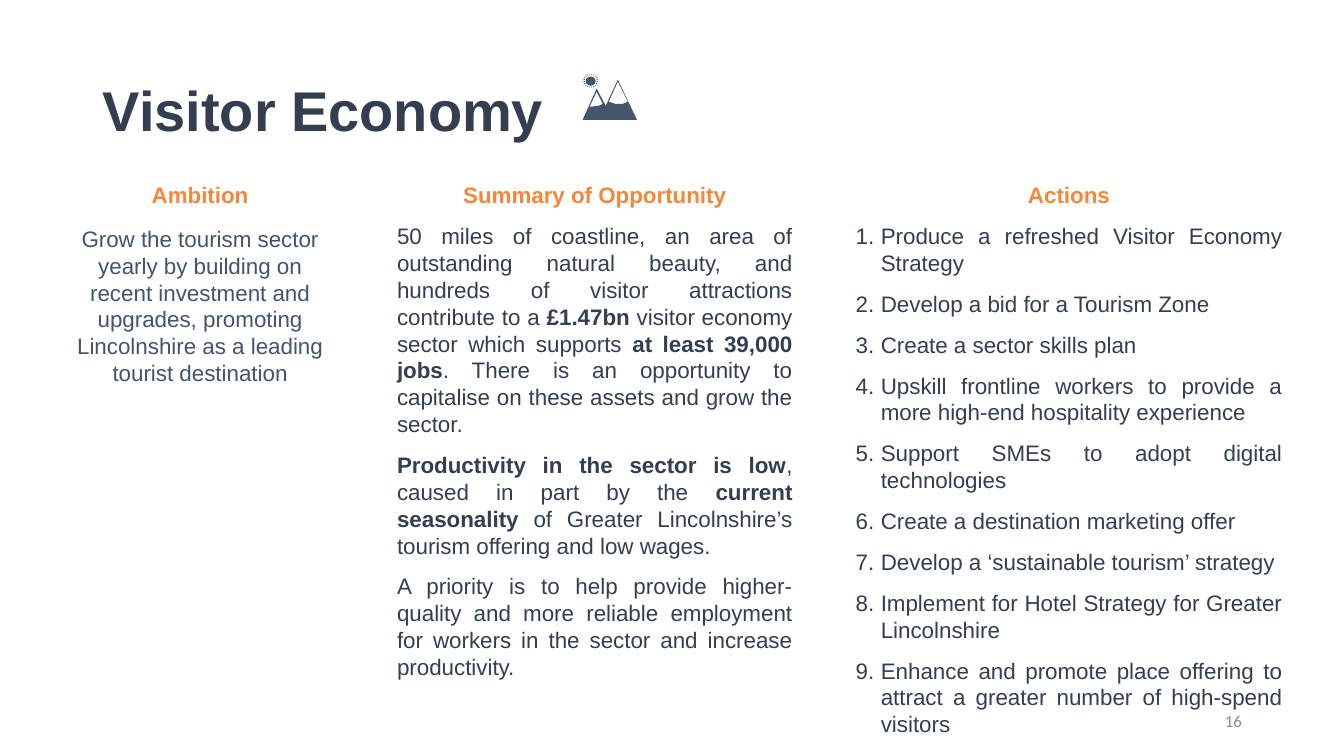
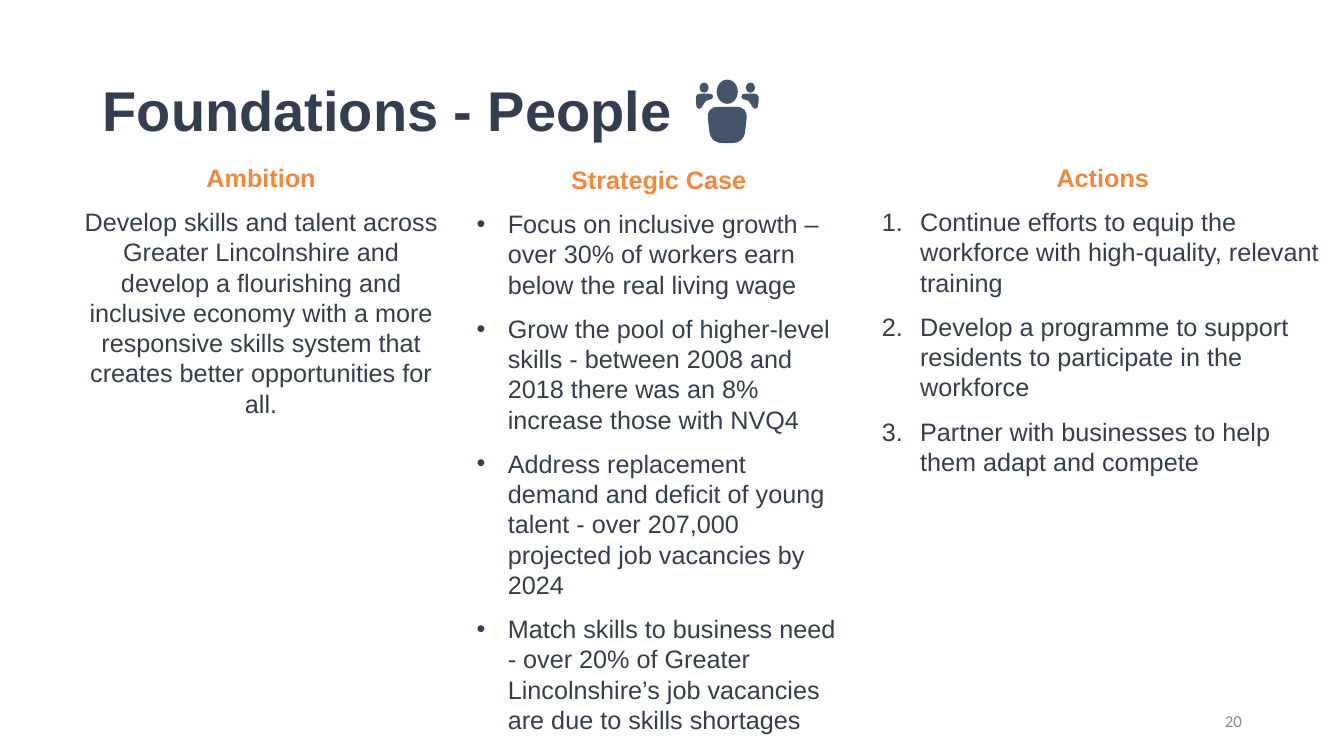
"""Build two strategy slides, each with a title, an icon and three columns."""
import math
from dataclasses import dataclass
from typing import Callable

from lxml import etree
from pptx import Presentation
from pptx.dml.color import RGBColor
from pptx.enum import shapes, text
from pptx.oxml import ns
from pptx.shapes.shapetree import GroupShapes
from pptx.slide import Slide
from pptx.util import Inches, Pt

NAVY = "333F50"
SLATE = "44546A"
ORANGE = "F5873D"
GREY = "8C8C8C"
LEFT, CENTER = text.PP_ALIGN.LEFT, text.PP_ALIGN.CENTER
RIGHT, JUSTIFY = text.PP_ALIGN.RIGHT, text.PP_ALIGN.JUSTIFY
NUMBER = ("buAutoNum", "type", "arabicPeriod")
DOT = ("buChar", "char", "•")

Point = tuple[float, float]
Outline = list[Point]


@dataclass(frozen=True)
class Column:
    """A heading with the paragraphs below it; ** marks bold text."""
    box: tuple[float, float, float, float]
    heading: str
    paragraphs: tuple[str, ...]
    alignment: text.PP_ALIGN = LEFT
    bullet: tuple[str, str, str] | None = None
    indent: float = 0
    color: str = NAVY
    space_after: float = 0


@dataclass(frozen=True)
class Page:
    """The content of one slide."""
    title: str
    number: int
    size: int
    icon: Callable[[GroupShapes], None]
    columns: tuple[Column, ...]


def rgb(color: str) -> RGBColor:
    """Turn a hex string into a colour."""
    return RGBColor.from_string(color)


def style_font(font, size: float, color: str, bold: bool = False, name: str = "Arial") -> None:
    """Set the look of a font."""
    font.name, font.size, font.bold = name, Pt(size), bold
    font.color.rgb = rgb(color)


def fill_icon_part(shape) -> None:
    """Give an icon part its plain fill."""
    shape.shadow.inherit = False
    shape.fill.solid()
    shape.fill.fore_color.rgb = rgb(SLATE)
    shape.line.fill.background()


def draw_ellipse(parts: GroupShapes, left: float, top: float, width: float, height: float) -> None:
    """Draw a filled ellipse."""
    fill_icon_part(parts.add_shape(
        shapes.MSO_SHAPE.OVAL, Inches(left), Inches(top), Inches(width), Inches(height)))


def draw_outlines(parts: GroupShapes, *outlines: Outline):
    """Draw closed outlines as one shape, where inner ones are holes."""
    first, *others = [[(Inches(x), Inches(y)) for x, y in outline] for outline in outlines]
    builder = parts.build_freeform(*first[0], scale=1.0)
    builder.add_line_segments(first[1:], close=True)
    for outline in others:
        builder.move_to(*outline[0])
        builder.add_line_segments(outline[1:], close=True)
    shape = builder.convert_to_shape()
    fill_icon_part(shape)
    return shape


def draw_rounded(parts: GroupShapes, corners: Outline, radius: float) -> None:
    """Draw an outline whose corners are quadratic curves."""
    points = []
    for index, corner in enumerate(corners):
        ends = []
        for other in (corners[index - 1], corners[(index + 1) % len(corners)]):
            share = min(0.5, radius / math.dist(corner, other))
            ends.append(tuple(a + (b - a) * share for a, b in zip(corner, other)))
        points += [ends[0], corner, ends[1]]
    shape = draw_outlines(parts, points)
    lines = list(shape._element.iter(ns.qn("a:lnTo")))
    for control, end in zip(lines[0::3], lines[1::3]):
        control.tag = ns.qn("a:quadBezTo")
        control.append(end[0])
        end.getparent().remove(end)


def draw_mountains(parts: GroupShapes) -> None:
    """Draw two snowy peaks under a sun with rays."""
    peaks = [(5.78, 1.19), (5.92, 0.88), (6.01, 1.05), (6.13, 0.79), (6.32, 1.19)]
    large_snow = [(6.13, 0.81), (6.23, 1.01), (6.18, 1.03), (6.1, 1.03), (6.04, 1.01)]
    small_snow = [(5.92, 0.91), (5.98, 1.03), (5.94, 1.05), (5.85, 1.06)]
    draw_outlines(parts, peaks, large_snow, small_snow)

    ray_count, center_x, center_y = 20, 5.86, 0.8
    for index in range(ray_count):
        angle = math.tau * (index + 0.5) / ray_count
        draw_outlines(parts, [
            (center_x + radius_x * math.cos(angle + turn),
             center_y + radius_y * math.sin(angle + turn))
            for radius_x, radius_y, turn in (
                (0.08, 0.07, 0), (0.06, 0.06, 0.08), (0.06, 0.06, -0.08))])
    draw_ellipse(parts, 5.81, 0.76, 0.1, 0.09)


def draw_people(parts: GroupShapes) -> None:
    """Draw one person in front of two smaller ones."""
    body = [(7.01, 1.06), (7.42, 1.06), (7.38, 1.42), (7.05, 1.42)]
    draw_rounded(parts, body, 0.12)
    draw_ellipse(parts, 7.11, 0.79, 0.21, 0.24)
    shoulder = [(7.35, 0.93), (7.53, 0.93), (7.52, 1.08), (7.47, 1.08), (7.43, 0.99), (7.36, 0.99)]
    mirror = 2 * 7.215
    for side in (shoulder, [(mirror - x, y) for x, y in shoulder]):
        draw_rounded(parts, side, 0.05)
    for left in (6.94, 7.4):
        draw_ellipse(parts, left, 0.82, 0.09, 0.1)


def add_text_box(slide: Slide, left: float, top: float, width: float, height: float):
    """Add a wrapping text box and return its text frame."""
    frame = slide.shapes.add_textbox(
        Inches(left), Inches(top), Inches(width), Inches(height)).text_frame
    frame.word_wrap = True
    return frame


def add_bullet(paragraph, bullet: tuple[str, str, str], indent: float) -> None:
    """Give a paragraph a bullet or number with a hanging indent."""
    tag, attribute, value = bullet
    properties = paragraph._p.get_or_add_pPr()
    properties.set("marL", str(Inches(indent)))
    properties.set("indent", str(-Inches(indent)))
    etree.SubElement(properties, ns.qn("a:buFont"), typeface="Arial")
    etree.SubElement(properties, ns.qn(f"a:{tag}"), {attribute: value})


def add_column(slide: Slide, column: Column, size: int) -> None:
    """Draw a heading and its paragraphs."""
    frame = add_text_box(slide, *column.box)
    heading = frame.paragraphs[0]
    heading.text = column.heading
    heading.alignment = CENTER
    heading.space_after = Pt(column.space_after)
    style_font(heading.runs[0].font, size, ORANGE, bold=True)
    for content in column.paragraphs:
        paragraph = frame.add_paragraph()
        paragraph.alignment = column.alignment
        paragraph.space_before = Pt(10)
        paragraph.space_after = Pt(column.space_after)
        if column.bullet:
            add_bullet(paragraph, column.bullet, column.indent)
        for index, part in enumerate(content.split("**")):
            if part:
                run = paragraph.add_run()
                run.text = part
                style_font(run.font, size, column.color, bold=index % 2 == 1)


def add_title(slide: Slide, title: str) -> None:
    """Place and format the title."""
    shape = slide.shapes.title
    shape.left, shape.top = Inches(0.92), Inches(0.4)
    shape.width, shape.height = Inches(11.5), Inches(1.45)
    shape.text_frame.text = title
    shape.text_frame.vertical_anchor = text.MSO_ANCHOR.MIDDLE
    paragraph = shape.text_frame.paragraphs[0]
    paragraph.alignment = LEFT
    paragraph.line_spacing = 0.9
    style_font(paragraph.runs[0].font, 40, NAVY, bold=True)


def add_page_number(slide: Slide, number: int) -> None:
    """Write the page number at the bottom right."""
    frame = add_text_box(slide, 9.42, 6.95, 3, 0.4)
    frame.text = str(number)
    frame.vertical_anchor = text.MSO_ANCHOR.MIDDLE
    paragraph = frame.paragraphs[0]
    paragraph.alignment = RIGHT
    style_font(paragraph.runs[0].font, 12, GREY, name="Calibri")


PAGES = (
    Page("Visitor Economy", 16, 16, draw_mountains, (
        Column((0.56, 1.75, 2.85, 1.07), "Ambition", (
            "Grow the tourism sector yearly by building on recent investment and upgrades, "
            "promoting Lincolnshire as a leading tourist destination",
        ), CENTER, color=SLATE, space_after=2),
        Column((3.84, 1.75, 4.12, 3.9), "Summary of Opportunity", (
            "50 miles of coastline, an area of outstanding natural beauty, and hundreds of "
            "visitor attractions contribute to a **£1.47bn** visitor economy sector which "
            "supports **at least 39,000 jobs**. There is an opportunity to capitalise on these "
            "assets and grow the sector.",
            "**Productivity in the sector is low**, caused in part by the **current "
            "seasonality **of Greater Lincolnshire’s tourism offering and low wages.",
            "A priority is to help provide higher-quality and more reliable employment for "
            "workers in the sector and increase productivity.",
        ), JUSTIFY),
        Column((8.39, 1.75, 4.43, 4.89), "Actions", (
            "Produce a refreshed Visitor Economy Strategy",
            "Develop a bid for a Tourism Zone",
            "Create a sector skills plan",
            "Upskill frontline workers to provide a more high-end hospitality experience",
            "Support SMEs to adopt digital technologies",
            "Create a destination marketing offer",
            "Develop a ‘sustainable tourism’ strategy",
            "Implement for Hotel Strategy for Greater Lincolnshire",
            "Enhance and promote place offering to attract a greater number of high-spend visitors",
        ), JUSTIFY, NUMBER, 0.25),
    )),
    Page("Foundations - People", 20, 18, draw_people, (
        Column((0.7, 1.56, 3.78, 4.76), "Ambition", (
            "Develop skills and talent across Greater Lincolnshire and develop a flourishing and "
            "inclusive economy with a more responsive skills system that creates better "
            "opportunities for all.",
        ), CENTER),
        Column((4.63, 1.58, 3.81, 4.76), "Strategic Case", (
            "Focus on inclusive growth –over 30% of workers earn below the real living wage",
            "Grow the pool of higher-level skills - between 2008 and 2018 there was an 8% "
            "increase those with NVQ4",
            "Address replacement demand and deficit of young talent - over 207,000 projected "
            "job vacancies by 2024",
            "Match skills to business need - over 20% of Greater Lincolnshire’s job vacancies "
            "are due to skills shortages",
        ), LEFT, DOT, 0.31),
        Column((8.65, 1.56, 4.58, 4.76), "Actions", (
            "Continue efforts to equip the workforce with high-quality, relevant training",
            "Develop a programme to support residents to participate in the workforce",
            "Partner with businesses to help them adapt and compete",
        ), LEFT, NUMBER, 0.38),
    )),
)


def main() -> None:
    """Build and save the presentation."""
    presentation = Presentation()
    presentation.slide_width, presentation.slide_height = Inches(40 / 3), Inches(7.5)
    title_only = presentation.slide_layouts[5]
    for page in PAGES:
        slide = presentation.slides.add_slide(title_only)
        add_title(slide, page.title)
        page.icon(slide.shapes.add_group_shape().shapes)
        for column in page.columns:
            add_column(slide, column, page.size)
        add_page_number(slide, page.number)
    presentation.save("out.pptx")


if __name__ == "__main__":
    main()
